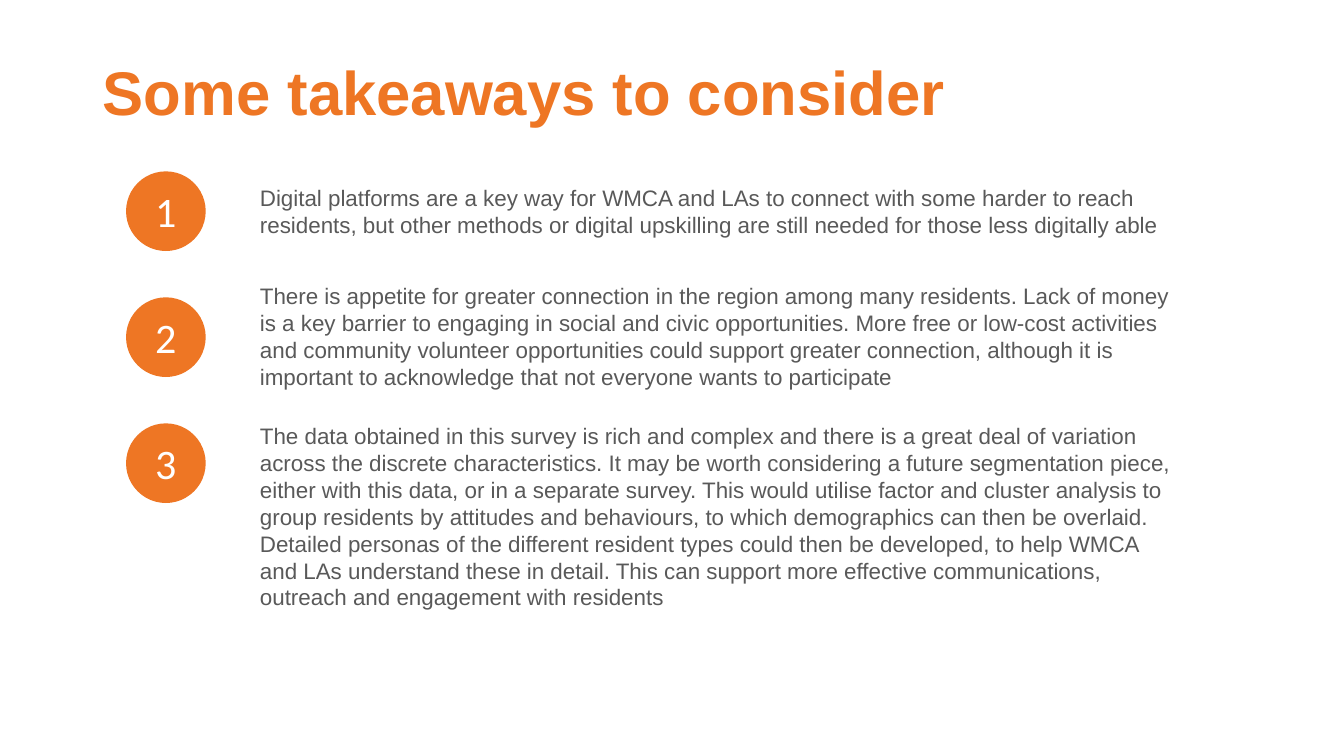
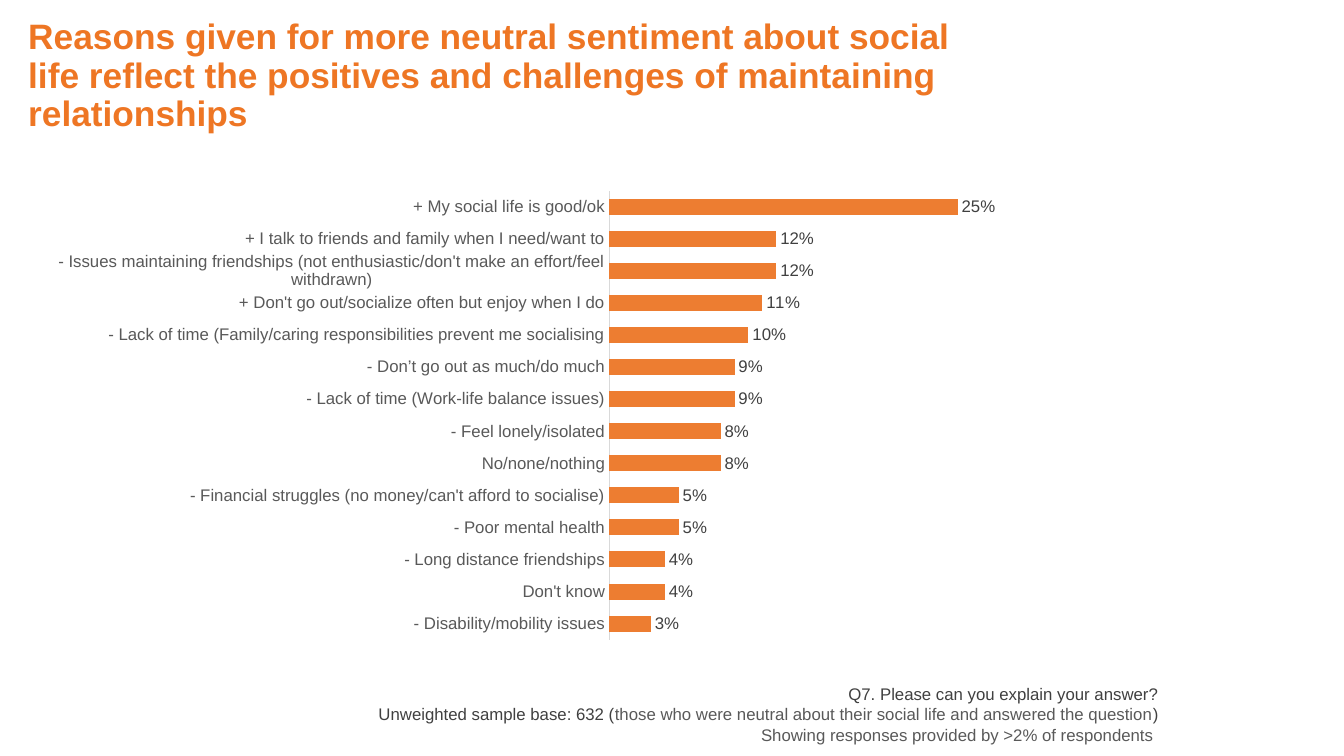
from lxml import etree
from pptx import Presentation
from pptx.chart.data import CategoryChartData
from pptx.dml.color import RGBColor
from pptx.enum.chart import XL_CHART_TYPE, XL_LABEL_POSITION, XL_TICK_MARK
from pptx.enum.shapes import MSO_SHAPE
from pptx.enum.text import MSO_ANCHOR, MSO_AUTO_SIZE, PP_ALIGN
from pptx.oxml.ns import qn
from pptx.util import Inches, Pt

# Shared style
COLOURS = {
    "title": "EE7624", "bar": "ED7D31", "body": "595959",
    "dark": "404040", "axis": "D9D9D9", "white": "FFFFFF", "black": "000000",
}
FONT, NUMBER_FONT = "Arial", "Calibri"

# Content: takeaways as (text, top, width, height)
TAKEAWAYS = [
    ("Digital platforms are a key way for WMCA and LAs to connect with some harder to reach "
     "residents, but other methods or digital upskilling are still needed for those less "
     "digitally able", 1.78, 9.4, 0.64),
    ("There is appetite for greater connection in the region among many residents. Lack of money "
     "is a key barrier to engaging in social and civic opportunities. More free or low-cost "
     "activities and community volunteer opportunities could support greater connection, "
     "although it is important to acknowledge that not everyone wants to participate",
     2.75, 9.4, 1.18),
    ("The data obtained in this survey is rich and complex and there is a great deal of variation "
     "across the discrete characteristics. It may be worth considering a future segmentation "
     "piece, either with this data, or in a separate survey. This would utilise factor and "
     "cluster analysis to group residents by attitudes and behaviours, to which demographics can "
     "then be overlaid. Detailed personas of the different resident types could then be "
     "developed, to help WMCA and LAs understand these in detail. This can support more effective "
     "communications, outreach and engagement with residents", 4.14, 9.27, 1.99),
]

REASONS = [
    ("+ My social life is good/ok", 0.25),
    ("+ I talk to friends and family when I need/want to", 0.12),
    ("- Issues maintaining friendships (not enthusiastic/don't make an effort/feel withdrawn)",
     0.12),
    ("+ Don't go out/socialize often but enjoy when I do", 0.11),
    ("- Lack of time (Family/caring responsibilities prevent me socialising", 0.1),
    ("- Don’t go out as much/do much", 0.09),
    ("- Lack of time (Work-life balance issues)", 0.09),
    ("- Feel lonely/isolated", 0.08),
    ("No/none/nothing", 0.08),
    ("- Financial struggles (no money/can't afford to socialise)", 0.05),
    ("- Poor mental health", 0.05),
    ("- Long distance friendships", 0.04),
    ("Don't know", 0.04),
    ("- Disability/mobility issues", 0.03),
]

# Source note: paragraphs of (text, colour) runs
SOURCE_NOTE = [
    [("Q7. Please can you explain your answer?", "dark")],
    [("Unweighted sample base: 632 (", "dark"),
     ("those who were neutral about their social life and answered the question", "body"),
     (")", "dark")],
    [("Showing responses provided by >2% of respondents ", "body")],
]


def colour(name):
    return RGBColor.from_string(COLOURS[name])


def style_font(font, size, colour_name, name=FONT, bold=False):
    font.size, font.name, font.bold = Pt(size), name, bold
    font.color.rgb = colour(colour_name)


def add_titled_slide(presentation, text, left, top, width, height, size):
    slide = presentation.slides.add_slide(presentation.slide_layouts[5])
    title = slide.shapes.title
    title.left, title.top, title.width, title.height = map(Inches, (left, top, width, height))
    frame = title.text_frame
    frame.text = text
    frame.auto_size = MSO_AUTO_SIZE.NONE
    frame.vertical_anchor = MSO_ANCHOR.MIDDLE
    paragraph = frame.paragraphs[0]
    paragraph.alignment, paragraph.line_spacing = PP_ALIGN.LEFT, 0.9
    style_font(paragraph.runs[0].font, size, "title", bold=True)
    return slide


def add_text_frame(slide, left, top, width, height):
    box = slide.shapes.add_textbox(*map(Inches, (left, top, width, height)))
    box.text_frame.word_wrap = True
    return box.text_frame


def clear_insets(frame):
    frame.margin_left = frame.margin_right = frame.margin_top = frame.margin_bottom = 0
    frame.vertical_anchor = MSO_ANCHOR.MIDDLE


def add_number_badge(slide, number, left, top, diameter):
    badge = slide.shapes.add_shape(
        MSO_SHAPE.OVAL, *map(Inches, (left, top, diameter, diameter)))
    badge.shadow.inherit = False
    badge.fill.solid()
    badge.fill.fore_color.rgb = colour("title")
    badge.line.fill.background()
    frame = badge.text_frame
    clear_insets(frame)
    frame.text = str(number)
    frame.paragraphs[0].alignment = PP_ALIGN.CENTER
    style_font(frame.paragraphs[0].runs[0].font, 30, "white", NUMBER_FONT)


def set_plot_layout(chart, x, y, width, height):
    plot_area = chart.element.find(".//" + qn("c:plotArea"))
    for old_layout in plot_area.findall(qn("c:layout")):
        plot_area.remove(old_layout)
    layout = etree.Element(qn("c:layout"))
    manual = etree.SubElement(layout, qn("c:manualLayout"))
    settings = [("layoutTarget", "inner"), ("xMode", "edge"), ("yMode", "edge"),
                ("x", x), ("y", y), ("w", width), ("h", height)]
    for tag, value in settings:
        etree.SubElement(manual, qn("c:" + tag)).set("val", str(value))
    plot_area.insert(0, layout)


def add_reasons_chart(slide):
    data = CategoryChartData(number_format="0%")
    data.categories = [reason for reason, _ in REASONS]
    data.add_series("Series 1", [share for _, share in REASONS])
    chart = slide.shapes.add_chart(
        XL_CHART_TYPE.BAR_CLUSTERED, *map(Inches, (0.41, 1.7, 9.88, 4.84)), data).chart
    chart.has_legend = chart.has_title = False
    style_font(chart.font, 11, "black")
    set_plot_layout(chart, 0.57, 0.04, 0.42, 0.92)

    # Axes
    category_axis, value_axis = chart.category_axis, chart.value_axis
    category_axis.reverse_order = True
    category_axis.major_tick_mark = category_axis.minor_tick_mark = XL_TICK_MARK.NONE
    style_font(category_axis.tick_labels.font, 12, "body")
    category_axis.format.line.color.rgb = colour("axis")
    category_axis.format.line.width = Pt(0.75)
    value_axis.minimum_scale, value_axis.maximum_scale = 0, 0.3
    value_axis.has_major_gridlines = False
    value_axis.visible = False

    # Bars and labels
    plot = chart.plots[0]
    plot.gap_width = 100
    plot.vary_by_categories = False
    series = plot.series[0]
    series.format.fill.solid()
    series.format.fill.fore_color.rgb = colour("bar")
    labels = series.data_labels
    labels.show_value = True
    labels.number_format, labels.number_format_is_linked = "0%", False
    labels.position = XL_LABEL_POSITION.OUTSIDE_END
    style_font(labels.font, 12, "dark")


def build_takeaways(presentation):
    slide = add_titled_slide(
        presentation, "Some takeaways to consider", 0.92, 0.22, 11.5, 1.45, 44)
    for index, (text, top, width, height) in enumerate(TAKEAWAYS):
        add_number_badge(slide, index + 1, 1.25, 1.7 + index * 1.25, 0.79)
        frame = add_text_frame(slide, 2.48, top, width, height)
        frame.text = text
        style_font(frame.paragraphs[0].runs[0].font, 16, "body")


def build_reasons(presentation):
    slide = add_titled_slide(
        presentation,
        "Reasons given for more neutral sentiment about social life reflect the positives and "
        "challenges of maintaining relationships", 0.18, 0.43, 9.68, 0.66, 25.2)
    add_reasons_chart(slide)
    frame = add_text_frame(slide, 2.08, 6.78, 9.41, 0.61)
    clear_insets(frame)
    for index, runs in enumerate(SOURCE_NOTE):
        paragraph = frame.add_paragraph() if index else frame.paragraphs[0]
        paragraph.alignment = PP_ALIGN.RIGHT
        for text, colour_name in runs:
            run = paragraph.add_run()
            run.text = text
            style_font(run.font, 12, colour_name)


def main():
    presentation = Presentation()
    presentation.slide_width, presentation.slide_height = Inches(13.33), Inches(7.5)
    build_takeaways(presentation)
    build_reasons(presentation)
    presentation.save("out.pptx")


if __name__ == "__main__":
    main()
